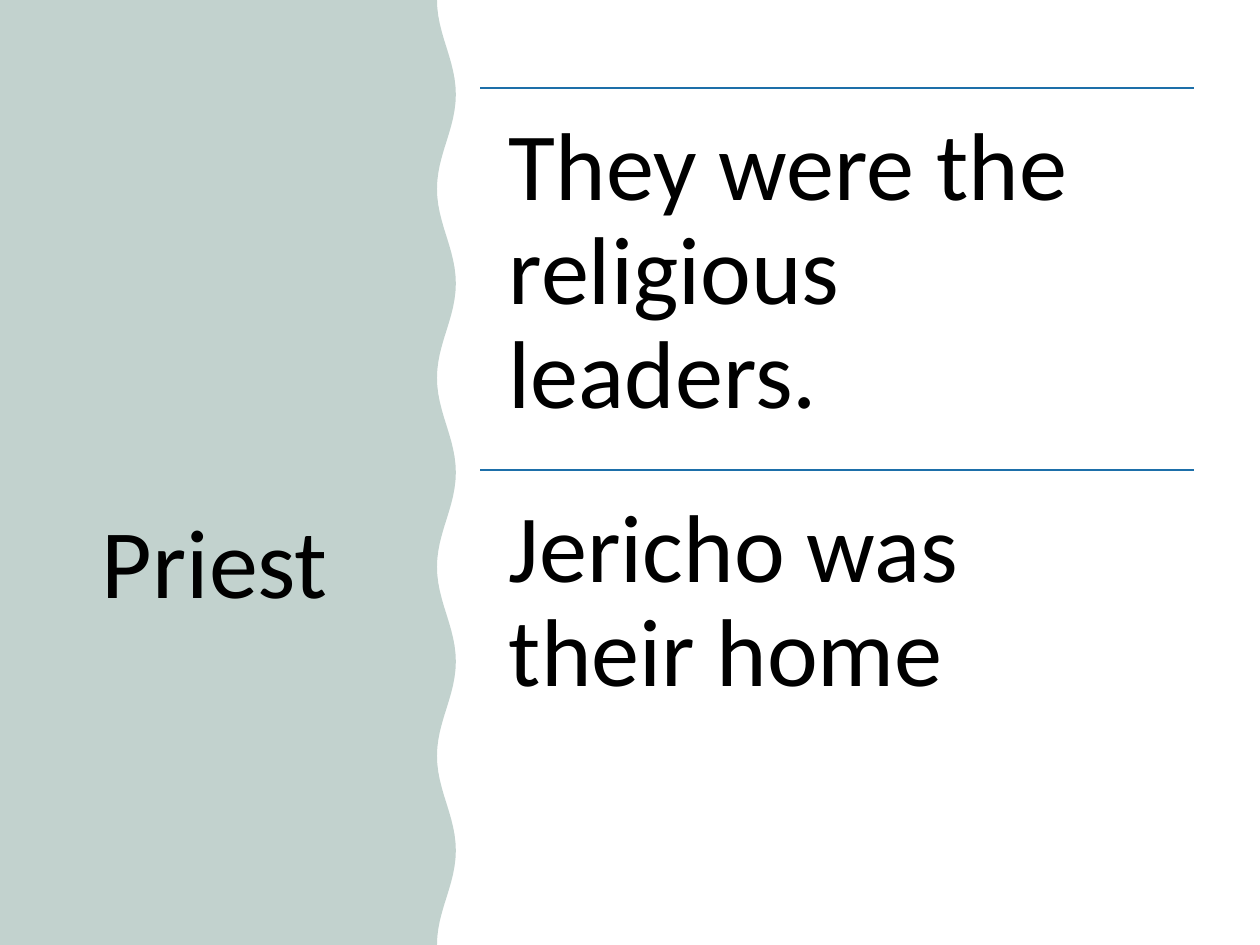
from dataclasses import dataclass
from math import cos, pi

from lxml.etree import SubElement
from pptx import Presentation
from pptx.dml.color import RGBColor
from pptx.enum.shapes import MSO_CONNECTOR
from pptx.enum.text import MSO_ANCHOR, MSO_AUTO_SIZE, PP_ALIGN
from pptx.oxml.ns import qn
from pptx.util import Cm, Pt

COLORS = {"white": "FFFFFF", "green": "0E4D3C", "blue": "1D6FA9", "black": "000000"}
FONT = "Calibri"
SLIDE_WIDTH, SLIDE_HEIGHT = 25.4, 19.05
WAVE_COUNT, WAVE_DEPTH, STEPS_PER_WAVE = 5, 0.38, 24
ROW_LEFT, ROW_TOP, ROW_WIDTH, ROW_HEIGHT = 9.68, 1.78, 14.38, 7.7
ROW_INSET = 0.58


@dataclass
class WavyPanel:
    edge: float
    color: str
    opacity: int = 100


PANELS = [
    WavyPanel(8.81, "white"),
    WavyPanel(8.51, "white"),
    WavyPanel(8.81, "green", 25),
]
STATEMENTS = ["They were the religious leaders.", "Jericho was their home"]


def rgb(name: str) -> RGBColor:
    return RGBColor.from_string(COLORS[name])


def write_text(shape, text: str, *, size: float, align=PP_ALIGN.LEFT,
               anchor=MSO_ANCHOR.TOP, inset: float | None = None,
               space_after: float = 0) -> None:
    frame = shape.text_frame
    frame.word_wrap = True
    frame.auto_size = MSO_AUTO_SIZE.NONE
    frame.vertical_anchor = anchor
    if inset is not None:
        frame.margin_left = frame.margin_right = Cm(inset)
        frame.margin_top = frame.margin_bottom = Cm(inset)
    paragraph = frame.paragraphs[0]
    paragraph.alignment = align
    paragraph.line_spacing = 0.9
    paragraph.space_after = Pt(space_after)
    run = paragraph.add_run()
    run.text = text
    run.font.name = FONT
    run.font.size = Pt(size)
    run.font.color.rgb = rgb("black")


def draw_panel(slide, panel: WavyPanel) -> None:
    """Fill the left side of the slide up to a wavy right edge."""
    steps = WAVE_COUNT * STEPS_PER_WAVE
    edge_points = [
        (Cm(panel.edge + WAVE_DEPTH * (1 - cos(2 * pi * step / STEPS_PER_WAVE)) / 2),
         Cm(SLIDE_HEIGHT * step / steps))
        for step in range(steps + 1)
    ]
    builder = slide.shapes.build_freeform(0, 0)
    builder.add_line_segments(edge_points + [(0, Cm(SLIDE_HEIGHT))], close=True)
    shape = builder.convert_to_shape()
    shape.shadow.inherit = False
    shape.line.fill.background()
    shape.fill.solid()
    shape.fill.fore_color.rgb = rgb(panel.color)
    if panel.opacity < 100:
        color = shape.fill._xPr.find(qn("a:solidFill"))[0]
        SubElement(color, qn("a:alpha")).set("val", str(panel.opacity * 1000))


def draw_statement(slide, text: str, top: float) -> None:
    """Draw a rule with a statement below it."""
    rule = slide.shapes.add_connector(
        MSO_CONNECTOR.STRAIGHT, Cm(ROW_LEFT), Cm(top), Cm(ROW_LEFT + ROW_WIDTH), Cm(top))
    rule.line.color.rgb = rgb("blue")
    rule.line.width = Pt(1)
    SubElement(rule._element.spPr, qn("a:effectLst"))
    box = slide.shapes.add_textbox(Cm(ROW_LEFT), Cm(top), Cm(ROW_WIDTH), Cm(ROW_HEIGHT))
    write_text(box, text, size=55, inset=ROW_INSET, space_after=19)


def main() -> None:
    presentation = Presentation()
    presentation.slide_width = Cm(SLIDE_WIDTH)
    presentation.slide_height = Cm(SLIDE_HEIGHT)
    slide = presentation.slides.add_slide(presentation.slide_layouts[5])
    title = slide.shapes.title

    # Wavy side panel
    for panel in PANELS:
        draw_panel(slide, panel)

    # Title, raised above the panel
    slide.shapes._spTree.append(title._element)
    title.left, title.top, title.width, title.height = Cm(0.97), Cm(2.01), Cm(6.73), Cm(10.62)
    write_text(title, "Priest", size=56, align=PP_ALIGN.CENTER, anchor=MSO_ANCHOR.BOTTOM)

    # Statements
    for index, text in enumerate(STATEMENTS):
        draw_statement(slide, text, ROW_TOP + index * ROW_HEIGHT)

    presentation.save("out.pptx")


if __name__ == "__main__":
    main()
